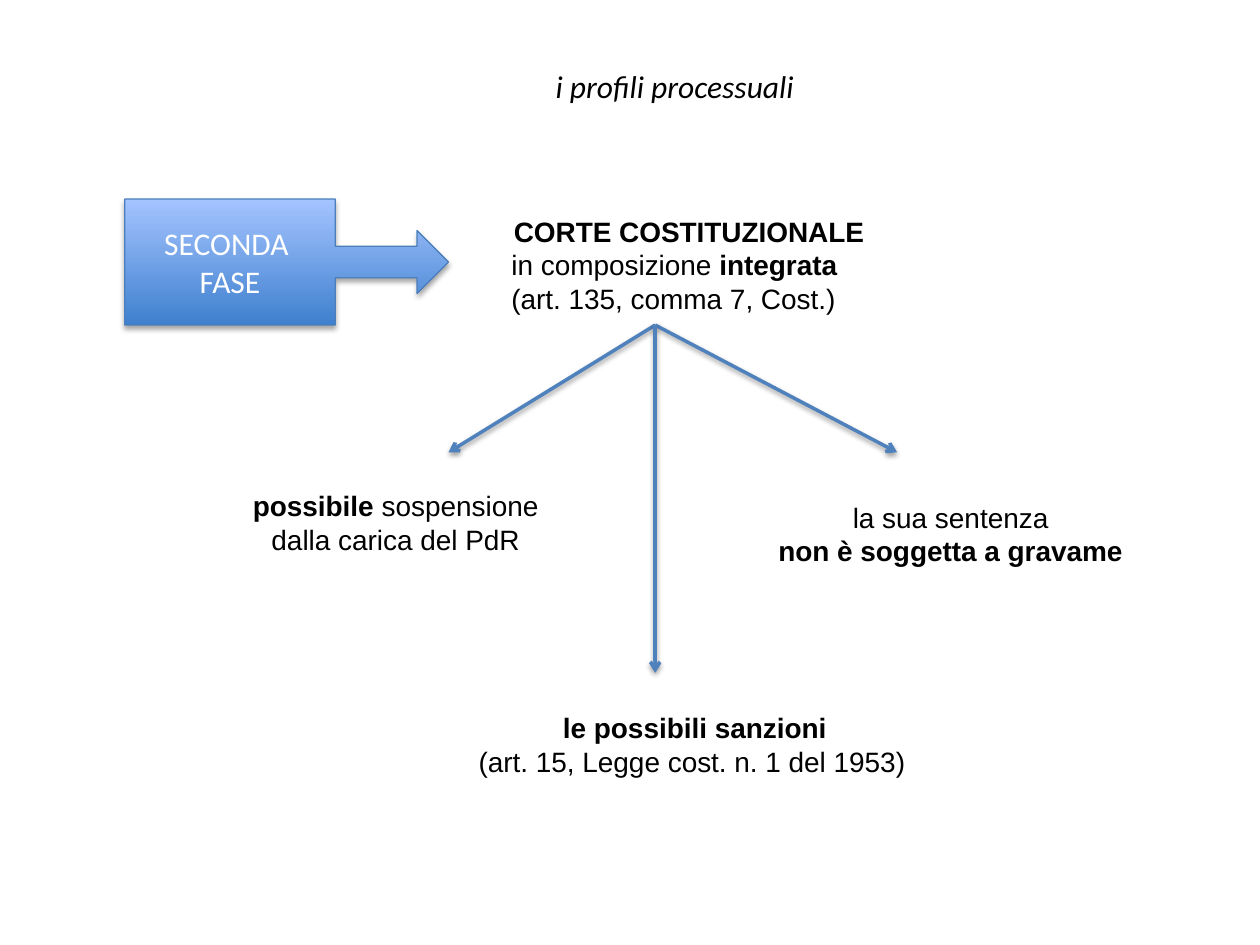
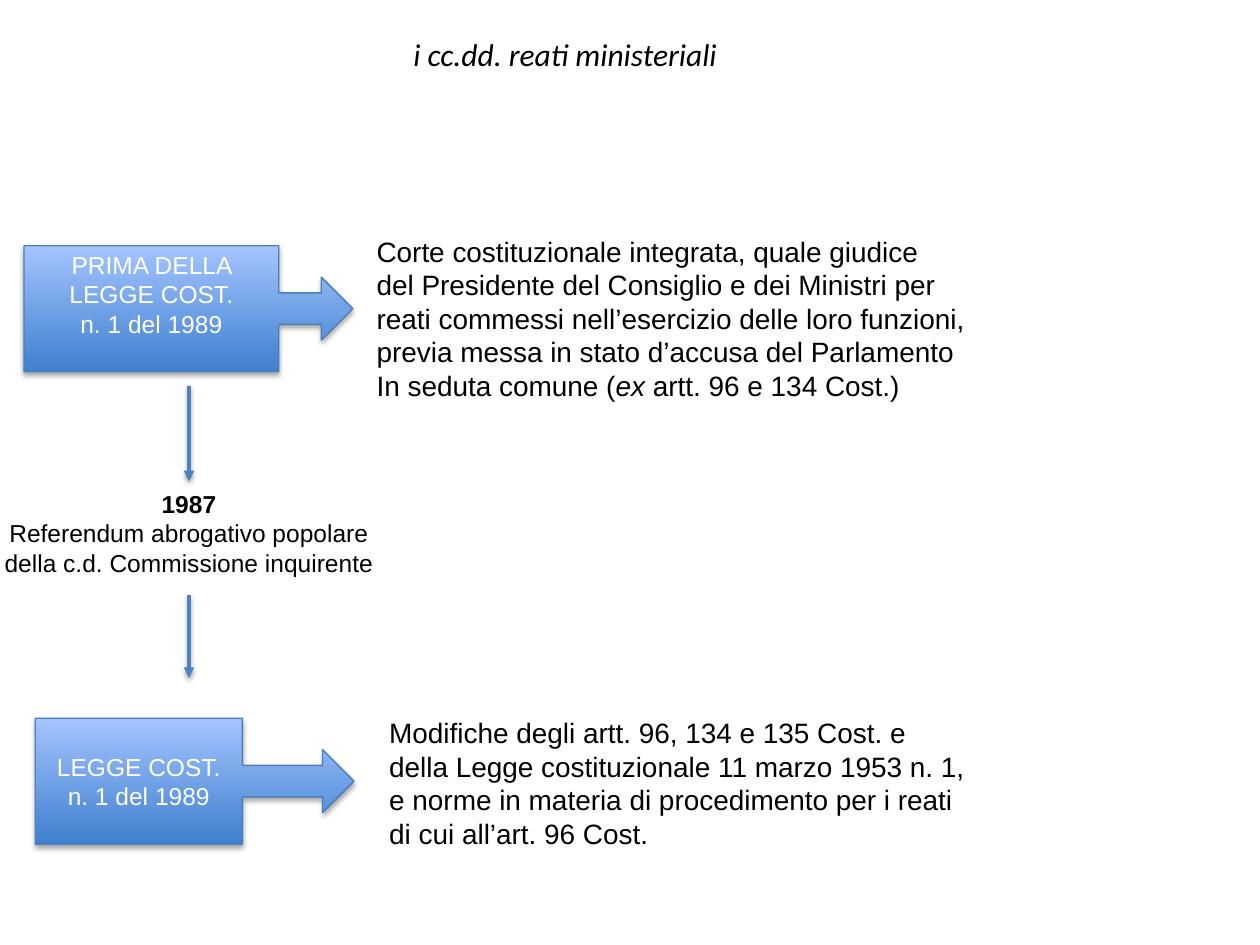
import pptx
import pptx.util
import pptx.dml.color
import pptx.enum.dml
import pptx.enum.shapes
import pptx.enum.text
import pptx.oxml.ns
from dataclasses import dataclass
from lxml import etree

Inches = pptx.util.Inches
Pt = pptx.util.Pt
RGB = pptx.dml.color.RGBColor.from_string
qn = pptx.oxml.ns.qn
ALIGN = pptx.enum.text.PP_ALIGN
ANCHOR = pptx.enum.text.MSO_ANCHOR


@dataclass
class Theme:
    ink: str = "000000"
    light: str = "FFFFFF"
    grad_dark: str = "3F80CE"
    grad_light: str = "A4C4FF"
    edge: str = "4B7EBC"
    arrow: str = "4F81BD"
    heading_font: str = "Calibri"
    body_font: str = "Arial"
    large: int = 18
    body: int = 16
    small: int = 14


theme = Theme()


def write(tf, paragraphs, font, size, color):
    for i, (align, runs) in enumerate(paragraphs):
        p = tf.paragraphs[0] if i == 0 else tf.add_paragraph()
        p.alignment = ALIGN.CENTER if align == "c" else ALIGN.LEFT
        for text, style in runs:
            r = p.add_run()
            r.text = text
            r.font.name = font
            r.font.size = Pt(size)
            r.font.bold = "b" in style
            r.font.italic = "i" in style
            r.font.color.rgb = RGB(color)


def add_shadow(sp, alpha, distance):
    effects = etree.SubElement(sp._element.spPr, qn("a:effectLst"))
    shadow = etree.SubElement(effects, qn("a:outerShdw"), blurRad=str(Pt(3.1)),
                              dist=str(Pt(distance)), dir="5400000", rotWithShape="0")
    color = etree.SubElement(shadow, qn("a:srgbClr"), val=theme.ink)
    etree.SubElement(color, qn("a:alpha"), val=str(alpha * 1000))


fork = (5.2, 2.58)
axis = 1.5
slides = [
    {
        "title": ("i profili processuali", 4.31, 0.48, 2.18),
        "callouts": [
            (0.99, 1.58, 2.57, 0.65, 0.05, theme.heading_font, theme.large,
             [("c", [("SECONDA ", "")]), ("c", [("FASE", "")])]),
        ],
        "texts": [
            (3.96, 1.65, 3.02, 1.18, theme.body, [
                ("c", [("CORTE COSTITUZIONALE", "b")]),
                ("l", [("in composizione ", ""), ("integrata", "b")]),
                ("l", [("(art. 135, comma 7, Cost.)", "")])]),
            (1.89, 3.83, 2.5, 0.64, theme.body, [
                ("c", [("possibile ", "b"), ("sospensione", "")]),
                ("c", [("dalla carica del PdR", "")])]),
            (6.06, 3.92, 2.97, 0.64, theme.body, [
                ("c", [("la sua sentenza", "")]),
                ("c", [("non è soggetta a gravame", "b")])]),
            (3.7, 5.59, 3.63, 0.64, theme.body, [
                ("c", [("le possibili sanzioni", "b")]),
                ("l", [("(art. 15, Legge cost. n. 1 del 1953)", "")])]),
        ],
        "head": "arrow",
        "arrows": [(fork, (3.56, 3.59)), (fork, (7.12, 3.59)), (fork, (5.2, 5.34))],
    },
    {
        "title": ("i cc.dd. reati ministeriali", 3.18, 0.23, 2.72),
        "callouts": [
            (0.19, 1.95, 2.61, 0.775, 0.28, theme.body_font, theme.small,
             [("c", [("PRIMA DELLA LEGGE COST.", "")]), ("c", [("n. 1 del 1989", "")])]),
            (0.28, 5.7, 2.53, 0.65, 0.05, theme.body_font, theme.small,
             [("c", [("LEGGE COST.", "")]), ("c", [("n. 1 del 1989", "")])]),
        ],
        "texts": [
            (2.89, 1.81, 4.92, 1.45, theme.body, [
                ("l", [("Corte costituzionale integrata, quale giudice", "")]),
                ("l", [("del Presidente del Consiglio e dei Ministri per", "")]),
                ("l", [("reati commessi nell’esercizio delle loro funzioni,", "")]),
                ("l", [("previa messa in stato d’accusa del Parlamento", "")]),
                ("l", [("In seduta comune (", ""), ("ex ", "i"),
                       ("artt. 96 e 134 Cost.)", "")])]),
            (-0.07, 3.83, 3.14, 0.81, theme.small, [
                ("c", [("1987", "b")]),
                ("c", [("Referendum abrogativo popolare", "")]),
                ("c", [("della c.d. Commissione inquirente", "")])]),
            (2.99, 5.63, 4.82, 1.18, theme.body, [
                ("l", [("Modifiche degli artt. 96, 134 e 135 Cost. e", "")]),
                ("l", [("della Legge costituzionale 11 marzo 1953 n. 1,", "")]),
                ("l", [("e norme in materia di procedimento per i reati", "")]),
                ("l", [("di cui all’art. 96 Cost.", "")])]),
        ],
        "head": "triangle",
        "arrows": [((axis, 3.06), (axis, 3.82)), ((axis, 4.72), (axis, 5.38))],
    },
]

prs = pptx.Presentation()
prs.slide_width = Inches(10)
prs.slide_height = Inches(7.5)

for content in slides:
    s = prs.slides.add_slide(prs.slide_layouts[5])
    s.background.fill.solid()
    s.background.fill.fore_color.rgb = RGB(theme.light)

    text, left, top, width = content["title"]
    title = s.shapes.title
    title.left, title.top = Inches(left), Inches(top)
    title.width, title.height = Inches(width), Inches(0.4)
    tf = title.text_frame
    tf.word_wrap = False
    tf.auto_size = pptx.enum.text.MSO_AUTO_SIZE.SHAPE_TO_FIT_TEXT
    tf.vertical_anchor = ANCHOR.TOP
    write(tf, [("l", [(text, "i")])], theme.heading_font, theme.large, theme.ink)

    for left, top, width, body_share, bottom, font, size, paragraphs in content["callouts"]:
        sp = s.shapes.add_shape(pptx.enum.shapes.MSO_SHAPE.RIGHT_ARROW_CALLOUT,
                                Inches(left), Inches(top), Inches(width), Inches(1))
        sp.adjustments[3] = body_share
        sp.fill.gradient()
        sp.fill.gradient_angle = 90
        stops = sp.fill.gradient_stops
        for stop, position, color in zip(stops, (0, 1), (theme.grad_dark, theme.grad_light)):
            stop.position = position
            stop.color.rgb = RGB(color)
        sp.line.color.rgb = RGB(theme.edge)
        sp.line.width = Pt(0.75)
        add_shadow(sp, 35, 1.8)
        tf = sp.text_frame
        tf.word_wrap = True
        tf.vertical_anchor = ANCHOR.MIDDLE
        tf.margin_bottom = Inches(bottom)
        write(tf, paragraphs, font, size, theme.light)

    for left, top, width, height, size, paragraphs in content["texts"]:
        box = s.shapes.add_textbox(Inches(left), Inches(top), Inches(width), Inches(height))
        tf = box.text_frame
        tf.word_wrap = False
        tf.auto_size = pptx.enum.text.MSO_AUTO_SIZE.SHAPE_TO_FIT_TEXT
        write(tf, paragraphs, theme.body_font, size, theme.ink)

    for start, end in content["arrows"]:
        line = s.shapes.add_connector(pptx.enum.shapes.MSO_CONNECTOR.STRAIGHT,
                                      *[Inches(v) for v in start + end])
        line.line.color.rgb = RGB(theme.arrow)
        line.line.width = Pt(2)
        etree.SubElement(line.line._get_or_add_ln(), qn("a:tailEnd"), type=content["head"])
        add_shadow(line, 38, 1.6)

prs.save("out.pptx")
